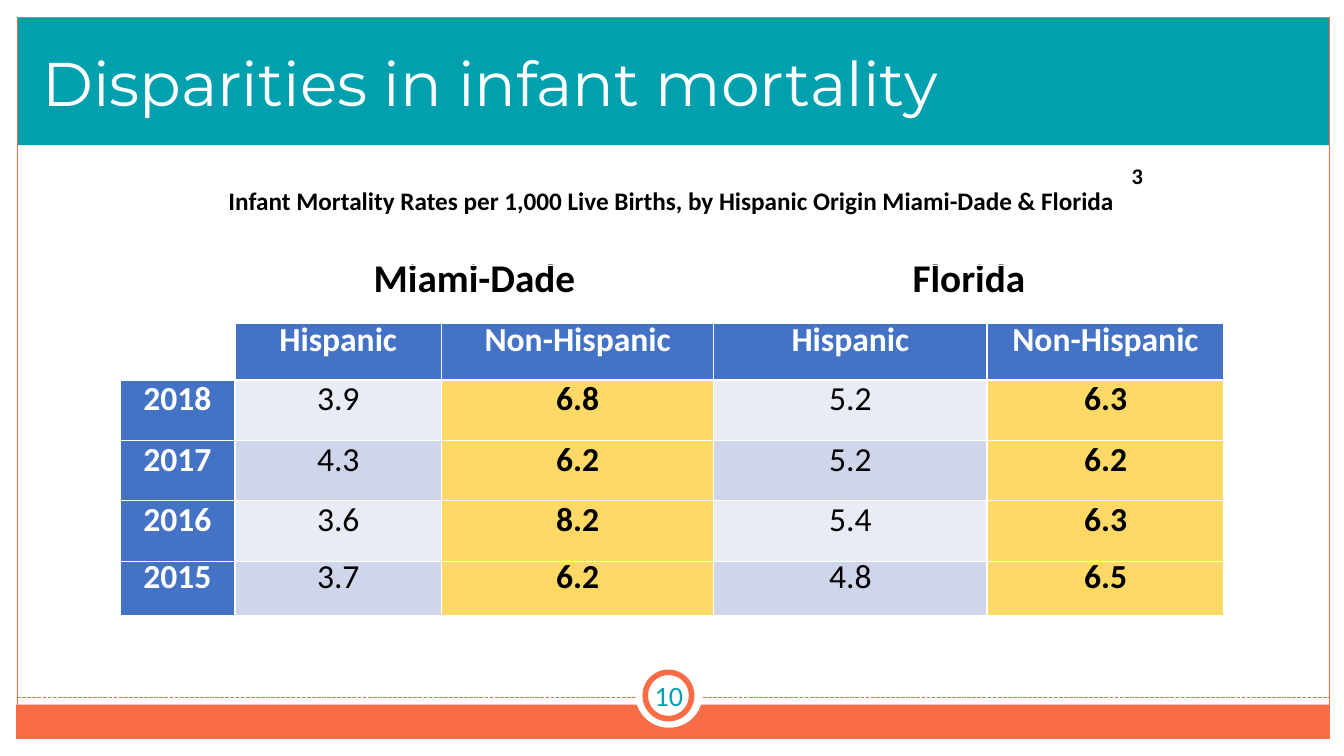
from lxml import etree
from pptx import Presentation, util as u
from pptx.dml.color import RGBColor
from pptx.enum import dml, shapes, text
from pptx.oxml.ns import qn

PX = 9144  # EMU per px, 100 px to the inch
COLORS = {
    "white": "FFFFFF", "black": "000000", "teal": "00A0AF", "orange": "F96C45",
    "header": "4472C4", "light": "E9EBF5", "band": "CFD5EA", "highlight": "FFD966",
}
COLUMNS = [114, 205, 270, 271, 235]
ROWS = [57, 57, 60, 60, 60, 54]
GROUPS = ["", "Miami-Dade", "", "Florida", ""]
HEADINGS = ["", "Hispanic", "Non-Hispanic", "Hispanic", "Non-Hispanic"]
RATES = [
    ["2018", "3.9", "6.8", "5.2", "6.3"],
    ["2017", "4.3", "6.2", "5.2", "6.2"],
    ["2016", "3.6", "8.2", "5.4", "6.3"],
    ["2015", "3.7", "6.2", "4.8", "6.5"],
]


def px(*values):
    return [u.Emu(v * PX) for v in values]


def rgb(name):
    return RGBColor.from_string(COLORS[name])


def style(p, size, color, bold=False, font="Calibri"):
    for r in p.runs:
        r.font.size = u.Pt(size)
        r.font.name = font
        r.font.bold = bold
        r.font.color.rgb = rgb(color)


def add_shape(s, kind, box, fill=None, line=None, width=0.75):
    sp = s.shapes.add_shape(kind, *px(*box))
    sp.shadow.inherit = False
    if fill:
        sp.fill.solid()
        sp.fill.fore_color.rgb = rgb(fill)
    else:
        sp.fill.background()
    if line:
        sp.line.color.rgb = rgb(line)
        sp.line.width = u.Pt(width)
    else:
        sp.line.fill.background()


def add_text(s, box, words, size, color, bold=False, font="Calibri",
             align=text.PP_ALIGN.CENTER, anchor=text.MSO_ANCHOR.TOP, spacing=1.0):
    tf = s.shapes.add_textbox(*px(*box)).text_frame
    tf.word_wrap = True
    tf.vertical_anchor = anchor
    tf.text = words
    p = tf.paragraphs[0]
    p.alignment = align
    p.line_spacing = spacing
    style(p, size, color, bold, font)


def add_dashed_line(s, x1, y1, x2, y2):
    line = s.shapes.add_connector(shapes.MSO_CONNECTOR.STRAIGHT, *px(x1, y1, x2, y2))
    line.line.color.rgb = rgb("orange")
    line.line.width = u.Pt(0.9)
    line.line.dash_style = dml.MSO_LINE.SQUARE_DOT
    etree.SubElement(line._element.spPr, qn("a:effectLst"))


def set_borders(cell, bottom):
    tcPr = cell._tc.get_or_add_tcPr()
    for side, width in (("L", 1), ("R", 1), ("T", 1), ("B", bottom)):
        ln = etree.SubElement(tcPr, qn(f"a:ln{side}"), w=str(u.Pt(width)))
        fill = etree.SubElement(ln, qn("a:solidFill"))
        etree.SubElement(fill, qn("a:srgbClr"), val=COLORS["white"])


def cell_look(row, col):
    """Return fill, text colour, size and boldness for a table position."""
    if row == 0:
        return None, "black", 28, True
    if row == 1 or col == 0:
        return (None if row == 1 and col == 0 else "header"), "white", 24, True
    if col % 2 == 0:
        return "highlight", "black", 24, True
    return ("band" if row % 2 else "light"), "black", 24, False


def fill_cell(cell, words, row, col):
    fill, color, size, bold = cell_look(row, col)
    set_borders(cell, 1 if row else 3)
    if fill:
        cell.fill.solid()
        cell.fill.fore_color.rgb = rgb(fill)
    else:
        cell.fill.background()
    cell.margin_left = cell.margin_right = cell.margin_top = cell.margin_bottom = px(5)[0]
    cell.vertical_anchor = text.MSO_ANCHOR.MIDDLE
    if words:
        cell.text_frame.text = words
        p = cell.text_frame.paragraphs[0]
        p.alignment = text.PP_ALIGN.CENTER
        p.line_spacing = u.Pt(13.5)
        style(p, size, color, bold)


def add_rate_table(s, left, top):
    box = px(left, top, sum(COLUMNS), sum(ROWS))
    table = s.shapes.add_table(len(ROWS), len(COLUMNS), *box).table
    table.first_row = table.horz_banding = False
    for column, width in zip(table.columns, px(*COLUMNS)):
        column.width = width
    for row, height in zip(table.rows, px(*ROWS)):
        row.height = height
    for i, values in enumerate([GROUPS, HEADINGS, *RATES]):
        for j, words in enumerate(values):
            fill_cell(table.cell(i, j), words, i, j)
    for j in (1, 3):
        table.cell(0, j).merge(table.cell(0, j + 1))


def main():
    prs = Presentation()
    prs.slide_width, prs.slide_height = px(1333, 750)
    s = prs.slides.add_slide(prs.slide_layouts[6])
    rect, oval = shapes.MSO_SHAPE.RECTANGLE, shapes.MSO_SHAPE.OVAL
    middle, bottom = text.MSO_ANCHOR.MIDDLE, text.MSO_ANCHOR.BOTTOM

    add_shape(s, rect, (17, 18, 1302, 126), "teal")
    add_shape(s, rect, (16, 699, 1302, 34), "orange")
    add_shape(s, rect, (17, 17, 1302, 716), line="orange")
    add_dashed_line(s, 17, 692, 1318, 692)
    add_shape(s, oval, (630, 655, 67, 67), "white")
    add_shape(s, oval, (640, 667, 46, 46), "white", "orange", 4)
    add_text(s, (621, 666, 85, 48), "10", 20, "teal", anchor=middle)

    add_text(s, (32, 33, 1211, 91), "Disparities in infant mortality", 44, "white",
             font="Montserrat", align=text.PP_ALIGN.LEFT, anchor=bottom, spacing=0.9)
    add_rate_table(s, 119, 263)
    add_text(s, (205, 179, 922, 40), "Infant Mortality Rates per 1,000 Live Births, "
             "by Hispanic Origin Miami-Dade & Florida", 18, "black", True)
    add_text(s, (1093, 156, 70, 37), "3", 16, "black", True)
    prs.save("out.pptx")


if __name__ == "__main__":
    main()
